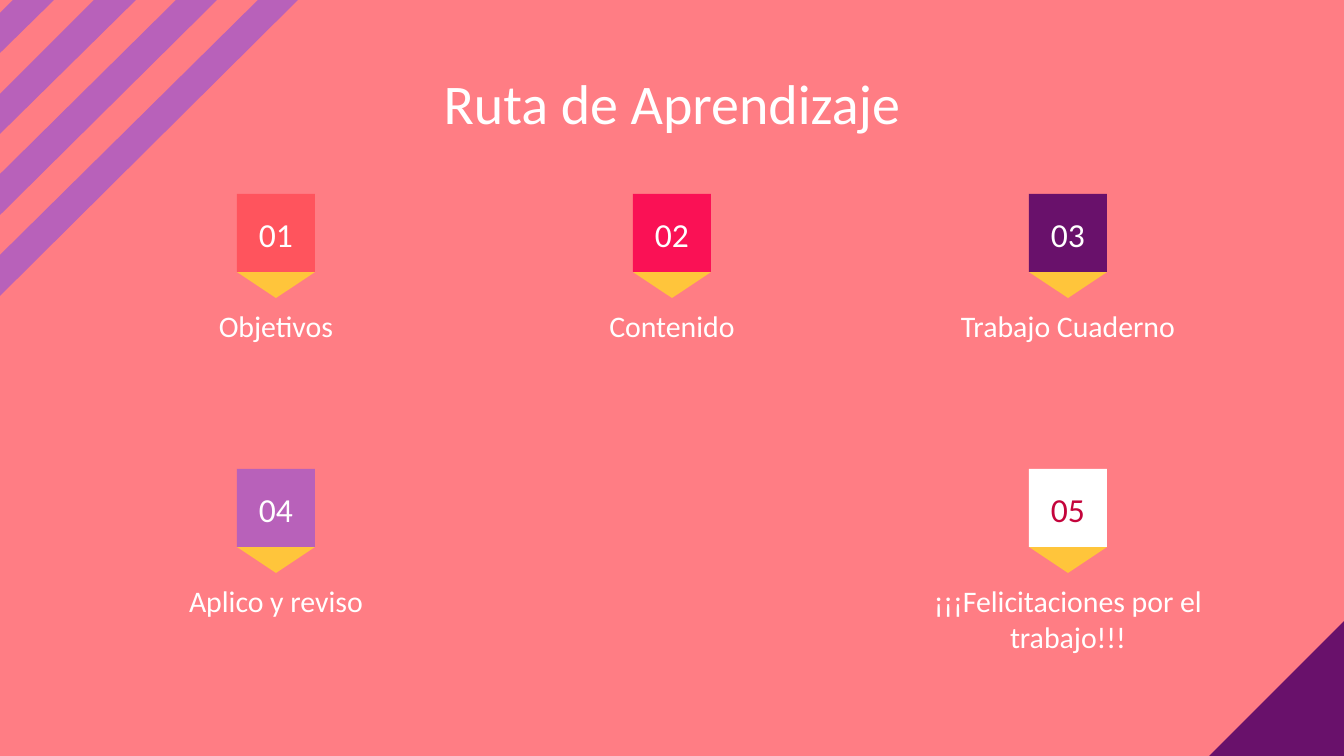
"""Builds the learning-route slide with five numbered steps."""
from pptx import Presentation
from pptx import util as u
from pptx.dml.color import RGBColor
from pptx.enum import shapes, text

TITLE = "Ruta de Aprendizaje"
STEPS = [
    ("01", "Objetivos", 0, 0, "FF545D", "FFFFFF"),
    ("02", "Contenido", 1, 0, "FA1155", "FFFFFF"),
    ("03", "Trabajo Cuaderno", 2, 0, "69116B", "FFFFFF"),
    ("04", "Aplico y reviso", 0, 1, "B861BA", "FFFFFF"),
    ("05", "¡¡¡Felicitaciones por el trabajo!!!", 2, 1, "FFFFFF", "C4043C"),
]
CORAL, LILAC, PURPLE, YELLOW, WHITE = "FF7D84", "B861BA", "69116B", "FFC53B", "FFFFFF"
FONT = "Calibri"
WIDTH, HEIGHT = 1344, 756
PX = 914400 / 134.4
FIRST_CENTER, COLUMN_STEP = 276, 396
FIRST_TOP, ROW_STEP = 194, 275
SQUARE, POINTER, CORNER = 78, 26, 135
STRIPE_START, STRIPE_STEP, STRIPE_WIDTH, STRIPE_SLOPE = 13, 81.5, 41, 0.99


def px(*lengths):
    return [u.Emu(round(length * PX)) for length in lengths]


def paint(fill, color):
    fill.solid()
    fill.fore_color.rgb = RGBColor.from_string(color)


def finish(shape, color):
    paint(shape.fill, color)
    shape.line.fill.background()
    shape.shadow.inherit = False


def add_block(slide, kind, box, color, rotation=0):
    block = slide.shapes.add_shape(kind, *px(*box))
    block.rotation = rotation
    finish(block, color)


def write(frame, words, size, color, anchor):
    frame.word_wrap = True
    frame.auto_size = text.MSO_AUTO_SIZE.NONE
    frame.vertical_anchor = anchor
    frame.margin_left = frame.margin_right = u.Inches(0.1)
    frame.margin_top = frame.margin_bottom = u.Inches(0.1)
    frame.text = words
    paragraph = frame.paragraphs[0]
    paragraph.alignment = text.PP_ALIGN.CENTER
    paragraph.font.size = u.Pt(size)
    paragraph.font.name = FONT
    paragraph.font.color.rgb = RGBColor.from_string(color)


def add_label(slide, box, words, size, color, anchor):
    label = slide.shapes.add_textbox(*px(*box))
    write(label.text_frame, words, size, color, anchor)


def add_stripe(slide, index):
    near = STRIPE_START + index * STRIPE_STEP
    far = near + STRIPE_WIDTH
    outline = slide.shapes.build_freeform(near, 0, scale=PX)
    outline.add_line_segments([(far, 0), (0, far * STRIPE_SLOPE), (0, near * STRIPE_SLOPE)])
    finish(outline.convert_to_shape(), LILAC)


def add_step(slide, number, name, column, row, fill, ink):
    center = FIRST_CENTER + column * COLUMN_STEP
    top = FIRST_TOP + row * ROW_STEP
    left = center - SQUARE / 2
    add_block(slide, shapes.MSO_SHAPE.ISOSCELES_TRIANGLE,
              (left, top + SQUARE, SQUARE, POINTER), YELLOW, 180)
    add_block(slide, shapes.MSO_SHAPE.RECTANGLE, (left, top, SQUARE, SQUARE), fill)
    add_label(slide, (center - 139, top + 13, 278, 54), number, 18, ink,
              text.MSO_ANCHOR.MIDDLE)
    add_label(slide, (center - 148, top + 100, 296, 117), name, 16, WHITE,
              text.MSO_ANCHOR.TOP)


def main():
    deck = Presentation()
    deck.slide_width, deck.slide_height = px(WIDTH, HEIGHT)
    slide = deck.slides.add_slide(deck.slide_layouts[5])
    paint(slide.background.fill, CORAL)

    title = slide.shapes.title
    title.left, title.top, title.width, title.height = px(106, 55, 1132, 85)
    write(title.text_frame, TITLE, 30, WHITE, text.MSO_ANCHOR.TOP)

    for index in range(4):
        add_stripe(slide, index)
    add_block(slide, shapes.MSO_SHAPE.RIGHT_TRIANGLE,
              (WIDTH - CORNER, HEIGHT - CORNER, CORNER, CORNER), PURPLE, 270)
    for step in STEPS:
        add_step(slide, *step)

    deck.save("out.pptx")


if __name__ == "__main__":
    main()
